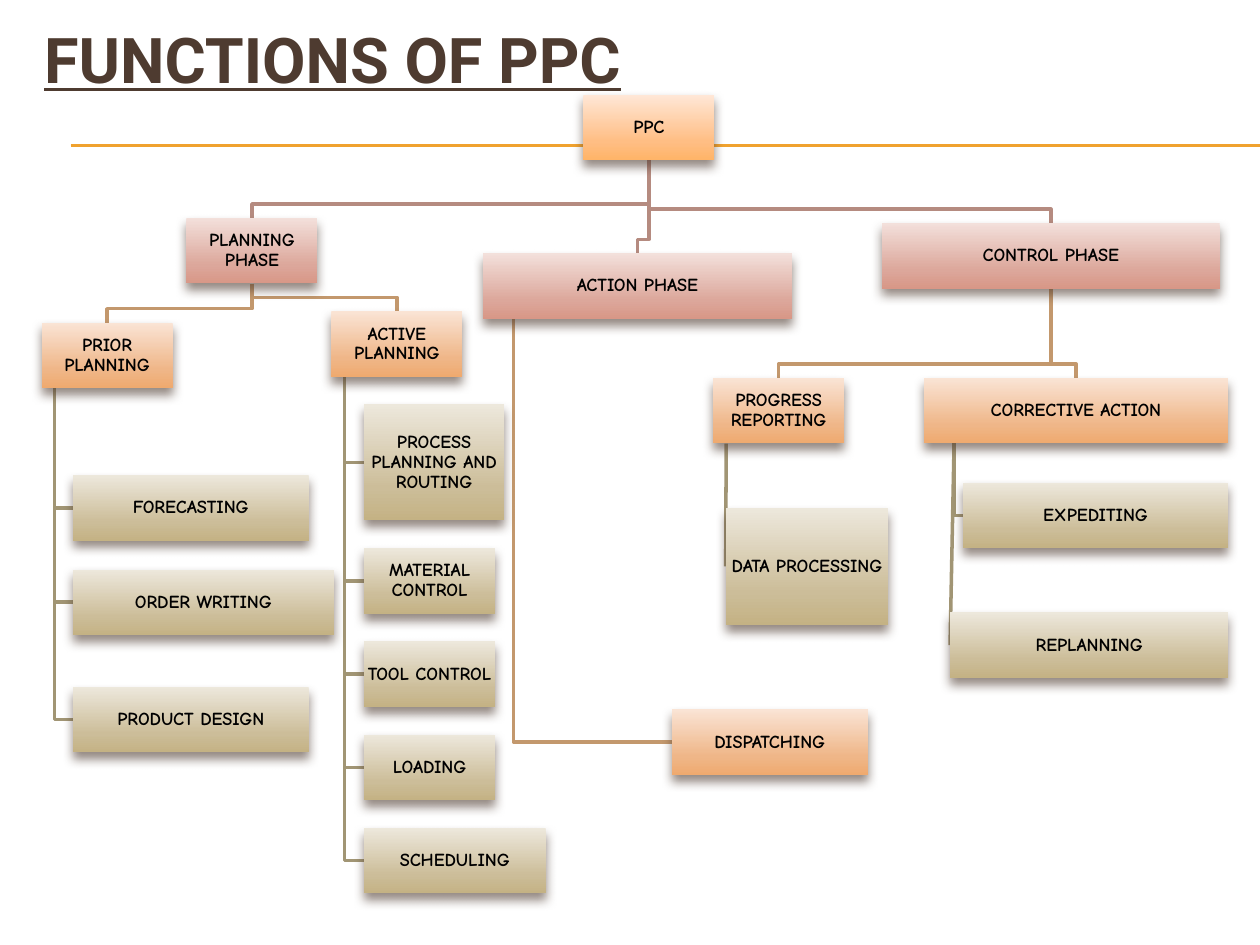
from lxml.etree import SubElement
from pptx import Presentation
from pptx.dml.color import RGBColor as Rgb
from pptx.enum.shapes import MSO_CONNECTOR as Conn, MSO_SHAPE as Shape
from pptx.enum.text import MSO_ANCHOR as Anchor, PP_ALIGN as Align
from pptx.oxml.ns import qn
from pptx.util import Inches, Pt

INK = {"title": "4E3B30", "text": "000000", "rule": "F0A22E", "shade": "4E3B30"}
# Gradient colours from top to bottom, by level of the tree
FILLS = {
    "root": ("FFE7D7", "FFBE84", "FFB468"),
    "phase": ("F3E0DB", "DCA79B", "D89787"),
    "part": ("FAE4D5", "EFB688", "EFAA6F"),
    "task": ("EDE8DC", "CCBD99", "C4B284"),
}
LINKS = {"phase": "B58B80", "part": "C3986D", "task": "A19574"}
W, H = 1.04, 0.52

# Name: level, parent, left, top, width, height
BOXES = {
    "PPC": ("root", None, 4.63, 0.75, W, H),
    "PLANNING PHASE": ("phase", "PPC", 1.48, 1.73, W, H),
    "PRIOR PLANNING": ("part", "PLANNING PHASE", 0.33, 2.56, W, H),
    "FORECASTING": ("task", "PRIOR PLANNING", 0.58, 3.77, 1.87, H),
    "ORDER WRITING": ("task", "PRIOR PLANNING", 0.58, 4.52, 2.07, H),
    "PRODUCT DESIGN": ("task", "PRIOR PLANNING", 0.58, 5.45, 1.87, H),
    "ACTIVE PLANNING": ("part", "PLANNING PHASE", 2.63, 2.47, W, H),
    "PROCESS PLANNING AND ROUTING": ("task", "ACTIVE PLANNING", 2.89, 3.21, 1.11, 0.92),
    "MATERIAL CONTROL": ("task", "ACTIVE PLANNING", 2.89, 4.35, W, H),
    "TOOL CONTROL": ("task", "ACTIVE PLANNING", 2.89, 5.09, W, H),
    "LOADING": ("task", "ACTIVE PLANNING", 2.89, 5.83, W, H),
    "SCHEDULING": ("task", "ACTIVE PLANNING", 2.89, 6.57, 1.44, H),
    "ACTION PHASE": ("phase", "PPC", 3.83, 2.01, 2.46, H),
    "DISPATCHING": ("part", "ACTION PHASE", 5.33, 5.63, 1.56, H),
    "CONTROL PHASE": ("phase", "PPC", 7, 1.77, 2.68, H),
    "PROGRESS REPORTING": ("part", "CONTROL PHASE", 5.66, 3, W, H),
    "DATA PROCESSING": ("task", "PROGRESS REPORTING", 5.76, 4.03, 1.29, 0.93),
    "CORRECTIVE ACTION": ("part", "CONTROL PHASE", 7.33, 3, 2.42, H),
    "EXPEDITING": ("task", "CORRECTIVE ACTION", 7.64, 3.83, 2.11, H),
    "REPLANNING": ("task", "CORRECTIVE ACTION", 7.54, 4.86, 2.21, H),
}
# Parents whose children hang from a rail on the left
RAILS = {"PRIOR PLANNING", "ACTIVE PLANNING", "ACTION PHASE",
         "PROGRESS REPORTING", "CORRECTIVE ACTION"}


def paint(shape, tones):
    """Give a box its three-stop gradient and its soft shadow."""
    shape.fill.gradient()
    shape.fill.gradient_angle = 270
    stops = shape._element.spPr.find(".//" + qn("a:gsLst"))
    for stop in list(stops):
        stops.remove(stop)
    for pos, tone in zip((0, 72, 100), tones):
        stop = SubElement(stops, qn("a:gs"), pos=str(pos * 1000))
        SubElement(stop, qn("a:srgbClr"), val=tone)
    shape.line.fill.background()
    shape.shadow.inherit = False
    glow = SubElement(shape._element.spPr.find(qn("a:effectLst")), qn("a:outerShdw"),
                      blurRad=str(Pt(6)), dist=str(Pt(4)), dir="5400000", rotWithShape="0")
    shade = SubElement(glow, qn("a:srgbClr"), val=INK["shade"])
    SubElement(shade, qn("a:alpha"), val="60000")


deck = Presentation()
deck.slide_width, deck.slide_height = Inches(10), Inches(7.5)
slide = deck.slides.add_slide(deck.slide_layouts[5])
shapes = slide.shapes

# Double rule under the title
for y in (1.15, 1.16):
    rule = shapes.add_connector(Conn.STRAIGHT, Inches(0.56), Inches(y), Inches(10), Inches(y))
    rule.line.color.rgb = Rgb.from_string(INK["rule"])
    rule.line.width = Pt(0.75)
    SubElement(rule._element.spPr, qn("a:effectLst"))

# Title
title = shapes.title
title.left, title.top, title.width, title.height = map(Inches, (0.25, 0, 9.5, 0.92))
title.text_frame.text = "FUNCTIONS OF PPC"
title.text_frame.vertical_anchor = Anchor.MIDDLE
para = title.text_frame.paragraphs[0]
para.alignment = Align.LEFT
font = para.runs[0].font
font.name, font.size, font.bold, font.underline = "Roboto", Pt(36), True, True
font.color.rgb = Rgb.from_string(INK["title"])

# Links, drawn behind the boxes
for level, parent, x, y, w, h in BOXES.values():
    if parent is None:
        continue
    _, _, px, py, pw, ph = BOXES[parent]
    foot = py + ph
    if parent in RAILS:
        rail, mid = px + pw / 10, y + h / 2
        dots = [(rail, foot), (rail, mid), (x, mid)]
        if x <= rail:
            dots.pop(1)
    else:
        stem, head, bend = px + pw / 2, x + w / 2, y - 0.11
        dots = [(stem, foot), (stem, bend), (head, bend), (head, y)]
    dots = [(Inches(a), Inches(b)) for a, b in dots]
    pen = shapes.build_freeform(*dots[0])
    pen.add_line_segments(dots[1:], close=False)
    link = pen.convert_to_shape()
    link.fill.background()
    link.line.color.rgb = Rgb.from_string(LINKS[level])
    link.line.width = Pt(2)
    link.shadow.inherit = False

# Boxes
for name, (level, _, *place) in BOXES.items():
    box = shapes.add_shape(Shape.RECTANGLE, *map(Inches, place))
    paint(box, FILLS[level])
    frame = box.text_frame
    frame.margin_left = frame.margin_right = Inches(0.01)
    frame.margin_top = frame.margin_bottom = Inches(0.01)
    frame.word_wrap = True
    frame.vertical_anchor = Anchor.MIDDLE
    frame.text = name
    para = frame.paragraphs[0]
    para.alignment, para.line_spacing = Align.CENTER, 0.9
    font = para.runs[0].font
    font.name, font.size, font.bold = "Comic Neue", Pt(10.5), True
    font.color.rgb = Rgb.from_string(INK["text"])

deck.save("out.pptx")
